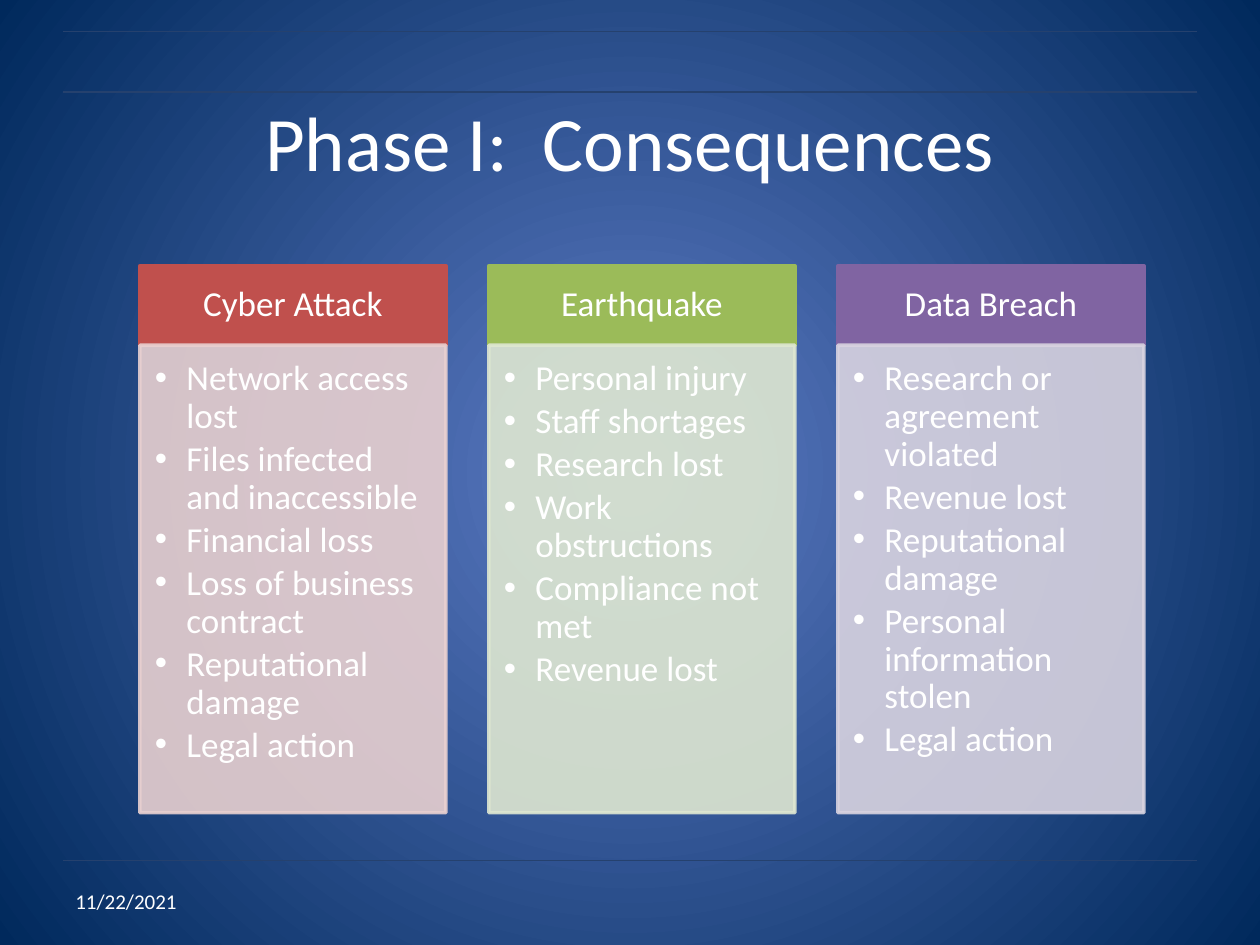
from lxml.etree import SubElement
from pptx import Presentation
from pptx.dml.color import RGBColor
from pptx.enum.shapes import MSO_CONNECTOR, MSO_SHAPE
from pptx.enum.text import MSO_ANCHOR, PP_ALIGN
from pptx.oxml.ns import qn
from pptx.util import Inches, Pt

COLORS = {
    "center": "5E7CC5", "edge": "00295C", "rule": "25416E", "text": "FFFFFF",
    "red": "C0504D", "pale red": "E8D0D0",
    "green": "9BBB59", "pale green": "DEE7D1",
    "purple": "8064A2", "pale purple": "D8D3E0",
}
FONT = "Calibri"
COLUMNS = [
    ("Cyber Attack", "red", [
        "Network access lost", "Files infected and inaccessible", "Financial loss",
        "Loss of business contract", "Reputational damage", "Legal action"]),
    ("Earthquake", "green", [
        "Personal injury", "Staff shortages", "Research lost",
        "Work obstructions", "Compliance not met", "Revenue lost"]),
    ("Data Breach", "purple", [
        "Research or agreement violated", "Revenue lost", "Reputational damage",
        "Personal information stolen", "Legal action"]),
]
COLUMN_WIDTH, COLUMN_PITCH, HEADER_HEIGHT = 2.43, 2.77, 0.63


def color(name):
    return RGBColor.from_string(COLORS[name])


def style_font(paragraph, size):
    paragraph.font.name = FONT
    paragraph.font.size = Pt(size)
    paragraph.font.color.rgb = color("text")


def paint_background(slide):
    """Fill the slide with a gradient that darkens outwards from its center."""
    fill = slide.background.fill
    fill.gradient()
    for stop, name, position in zip(fill.gradient_stops, ("center", "edge"), (0, 1)):
        stop.color.rgb = color(name)
        stop.position = position
    gradient = slide.element.find(".//" + qn("a:gradFill"))
    gradient.remove(gradient.find(qn("a:lin")))
    circle = SubElement(gradient, qn("a:path"), path="circle")
    SubElement(circle, qn("a:fillToRect"), l="50000", t="50000", r="50000", b="50000")


def add_rule(slide, left, top, width):
    rule = slide.shapes.add_connector(
        MSO_CONNECTOR.STRAIGHT, Inches(left), Inches(top), Inches(left + width), Inches(top))
    rule.line.color.rgb = color("rule")
    rule.line.width = Pt(0.75)
    SubElement(rule.element.spPr, qn("a:effectLst"))


def add_label(slide, left, top, width, height, text, size, alignment):
    box = slide.shapes.add_textbox(Inches(left), Inches(top), Inches(width), Inches(height))
    frame = box.text_frame
    frame.word_wrap = True
    frame.vertical_anchor = MSO_ANCHOR.MIDDLE
    paragraph = frame.paragraphs[0]
    paragraph.text = text
    paragraph.alignment = alignment
    style_font(paragraph, size)


def add_panel(slide, left, top, width, height, color_name, insets, anchor):
    panel = slide.shapes.add_shape(
        MSO_SHAPE.RECTANGLE, Inches(left), Inches(top), Inches(width), Inches(height))
    panel.shadow.inherit = False
    panel.fill.solid()
    panel.fill.fore_color.rgb = color(color_name)
    panel.line.color.rgb = color(color_name)
    panel.line.width = Pt(2)
    frame = panel.text_frame
    frame.word_wrap = True
    frame.vertical_anchor = anchor
    (frame.margin_left, frame.margin_top,
     frame.margin_right, frame.margin_bottom) = map(Inches, insets)
    return panel


def make_translucent(shape, percent):
    for rgb in shape.element.spPr.iter(qn("a:srgbClr")):
        SubElement(rgb, qn("a:alpha"), val=str(percent * 1000))


def add_bullet(paragraph):
    properties = paragraph._p.get_or_add_pPr()
    properties.set("marL", str(Inches(0.25)))
    properties.set("indent", str(Inches(-0.25)))
    SubElement(properties, qn("a:buFont"), typeface="Arial")
    SubElement(properties, qn("a:buChar"), char="•")


def add_column(slide, left, top, width, height, heading, hue, items):
    """Place a heading panel above a translucent panel of bullets."""
    header = add_panel(slide, left, top, width, HEADER_HEIGHT, hue,
                       (0.16, 0.09, 0.16, 0.09), MSO_ANCHOR.MIDDLE)
    paragraph = header.text_frame.paragraphs[0]
    paragraph.text = heading
    paragraph.alignment = PP_ALIGN.CENTER
    paragraph.line_spacing = 0.9
    style_font(paragraph, 20)

    body = add_panel(slide, left, top + HEADER_HEIGHT, width, height - HEADER_HEIGHT,
                     "pale " + hue, (0.12, 0.12, 0.16, 0.17), MSO_ANCHOR.TOP)
    make_translucent(body, 90)
    frame = body.text_frame
    frame.text = "\n".join(items)
    for paragraph in frame.paragraphs:
        add_bullet(paragraph)
        paragraph.alignment = PP_ALIGN.LEFT
        paragraph.line_spacing = 0.9
        paragraph.space_after = Pt(3)
        style_font(paragraph, 20)


def main():
    presentation = Presentation()
    presentation.slide_width, presentation.slide_height = Inches(10), Inches(7.5)
    slide = presentation.slides.add_slide(presentation.slide_layouts[6])
    paint_background(slide)
    for top in (6.83, 0.25, 0.73):
        add_rule(slide, 0.5, top, 9)
    add_label(slide, 0.5, 0.49, 9, 1.25, "Phase I:  Consequences", 44, PP_ALIGN.CENTER)
    for index, column in enumerate(COLUMNS):
        add_column(slide, 1.11 + index * COLUMN_PITCH, 2.11, COLUMN_WIDTH, 4.34, *column)
    add_label(slide, 0.5, 6.95, 2.33, 0.4, "11/22/2021", 12, PP_ALIGN.LEFT)
    presentation.save("out.pptx")


if __name__ == "__main__":
    main()
